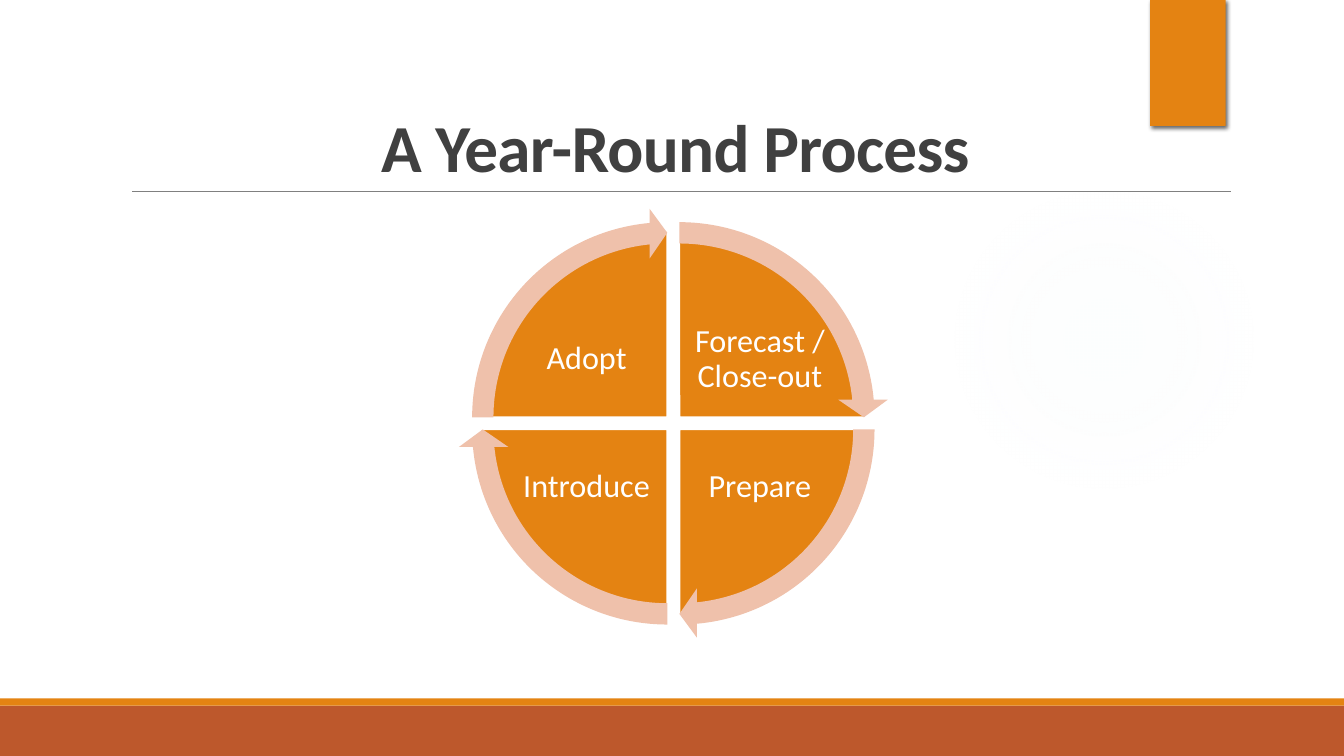
from dataclasses import dataclass

import lxml.etree
import pptx
import pptx.dml.color
import pptx.enum.shapes
import pptx.enum.text
import pptx.oxml
import pptx.oxml.ns
import pptx.util
from pptx.util import Inches

SHAPE = pptx.enum.shapes.MSO_SHAPE
ANCHOR = pptx.enum.text.MSO_ANCHOR
ORANGE, RUST, PEACH, WHITE = "E48312", "BD582C", "EFC1AB", "FFFFFF"
CENTER_X, CENTER_Y = 6.68, 4.2
GAP = 0.06
PIE_SIZE, ARROW_SIZE = 3.7, 4.15
LABEL_W, LABEL_H = 1.36, 1.01
LABEL_DX, LABEL_DY = 0.86, 0.635
# Angle adjustments count in units where a quarter turn is 54.
QUARTER, FULL_TURN = 54, 216
ARROW_SWEEP = 50.725


@dataclass
class Quadrant:
    label: str
    side_x: int
    side_y: int
    start: float


QUADRANTS = [
    Quadrant("Forecast / Close-out", 1, -1, 162),
    Quadrant("Prepare", 1, 1, 0),
    Quadrant("Introduce", -1, 1, 54),
    Quadrant("Adopt", -1, -1, 108),
]


def rgb(color: str) -> pptx.dml.color.RGBColor:
    return pptx.dml.color.RGBColor.from_string(color)


def add_filled(s, kind, x: float, y: float, w: float, h: float, color: str,
               line: str | None = None, adjustments: tuple = ()):
    sp = s.shapes.add_shape(kind, Inches(x), Inches(y), Inches(w), Inches(h))
    sp.shadow.inherit = False
    sp.fill.solid()
    sp.fill.fore_color.rgb = rgb(color)
    if line:
        sp.line.color.rgb = rgb(line)
        sp.line.width = pptx.util.Pt(1.25)
    else:
        sp.line.fill.background()
    for i, value in enumerate(adjustments):
        sp.adjustments[i] = value
    return sp


def write_text(sp, text: str, *, size: float, color: str, bold: bool = False,
               anchor=ANCHOR.MIDDLE, line_spacing: float = 0.9,
               inset: float | None = None, tracking: float = 0) -> None:
    tf = sp.text_frame
    tf.word_wrap = True
    tf.auto_size = pptx.enum.text.MSO_AUTO_SIZE.NONE
    tf.vertical_anchor = anchor
    if inset is not None:
        tf.margin_left = tf.margin_right = Inches(inset)
        tf.margin_top = tf.margin_bottom = Inches(inset)
    p = tf.paragraphs[0]
    p.alignment = pptx.enum.text.PP_ALIGN.CENTER
    p.line_spacing = line_spacing
    r = p.add_run()
    r.text = text
    r.font.name = "Calibri"
    r.font.size = pptx.util.Pt(size)
    r.font.bold = bold
    r.font.color.rgb = rgb(color)
    if tracking:
        r.font._element.set("spc", str(round(tracking * 100)))


def add_rule(s, x1: float, x2: float, y: float) -> None:
    line = s.shapes.add_connector(pptx.enum.shapes.MSO_CONNECTOR.STRAIGHT,
                                  Inches(x1), Inches(y), Inches(x2), Inches(y))
    line.line.color.rgb = rgb("808080")
    line.line.width = pptx.util.Pt(0.5)
    lxml.etree.SubElement(line._element.spPr, pptx.oxml.ns.qn("a:effectLst"))


def set_glow(sp, color: str, stops: list[tuple[int, int]]) -> None:
    """Fill with a circular gradient of (position %, opacity %) stops."""
    marks = "".join(
        f'<a:gs pos="{pos * 1000}"><a:srgbClr val="{color}">'
        f'<a:alpha val="{alpha * 1000}"/></a:srgbClr></a:gs>'
        for pos, alpha in stops)
    gradient = pptx.oxml.parse_xml(
        f'<a:gradFill {pptx.oxml.ns.nsdecls("a")}><a:gsLst>{marks}</a:gsLst>'
        '<a:path path="circle"><a:fillToRect l="50000" t="50000" r="50000" '
        'b="50000"/></a:path></a:gradFill>')
    spPr = sp._element.spPr
    spPr.replace(spPr.find(pptx.oxml.ns.qn("a:solidFill")), gradient)


def add_shadow(sp) -> None:
    effects = sp._element.spPr.find(pptx.oxml.ns.qn("a:effectLst"))
    effects.append(pptx.oxml.parse_xml(
        f'<a:outerShdw {pptx.oxml.ns.nsdecls("a")} blurRad="38100" '
        'dist="25400" dir="2700000" algn="tl" rotWithShape="0">'
        '<a:srgbClr val="000000"><a:alpha val="60000"/></a:srgbClr>'
        '</a:outerShdw>'))


def add_centered(s, kind, q: Quadrant, size: float, color: str,
                 adjustments: tuple, line: str | None = None) -> None:
    x = CENTER_X + q.side_x * GAP - size / 2
    y = CENTER_Y + q.side_y * GAP - size / 2
    add_filled(s, kind, x, y, size, size, color, line, adjustments)


def add_cycle(s) -> None:
    for q in QUADRANTS:
        end = (q.start + QUARTER) % FULL_TURN
        add_centered(s, SHAPE.PIE, q, PIE_SIZE, ORANGE, (q.start, end), WHITE)
        label = s.shapes.add_textbox(
            Inches(CENTER_X + q.side_x * LABEL_DX - LABEL_W / 2),
            Inches(CENTER_Y + q.side_y * LABEL_DY - LABEL_H / 2),
            Inches(LABEL_W), Inches(LABEL_H))
        write_text(label, q.label, size=23, color=WHITE, inset=0.03)
    for q in QUADRANTS:
        add_centered(s, SHAPE.CIRCULAR_ARROW, q, ARROW_SIZE, PEACH,
                     (0.051, 3.275, q.start + ARROW_SWEEP, q.start, 0.059))


def main() -> None:
    prs = pptx.Presentation()
    prs.slide_width, prs.slide_height = Inches(13.333), Inches(7.5)
    s = prs.slides.add_slide(prs.slide_layouts[5])

    add_filled(s, SHAPE.RECTANGLE, 0, 7, 13.333, 0.5, RUST)
    add_filled(s, SHAPE.RECTANGLE, 0, 6.93, 13.333, 0.07, ORANGE)
    add_rule(s, 1.31, 12.21, 1.9)
    glow = add_filled(s, SHAPE.OVAL, 9.41, 1.83, 3.08, 3.08, WHITE)
    set_glow(glow, "E0EBF2", [(0, 7), (36, 6), (69, 0)])
    add_shadow(add_filled(s, SHAPE.RECTANGLE, 11.41, 0, 0.75, 1.25, ORANGE))

    title = s.shapes.title
    title.left, title.top = Inches(1.2), Inches(0.31)
    title.width, title.height = Inches(11), Inches(1.59)
    write_text(title, "A Year-Round Process", size=48, color="404040",
               bold=True, anchor=ANCHOR.BOTTOM, line_spacing=0.85,
               tracking=-0.5)
    add_cycle(s)
    prs.save("out.pptx")


if __name__ == "__main__":
    main()
